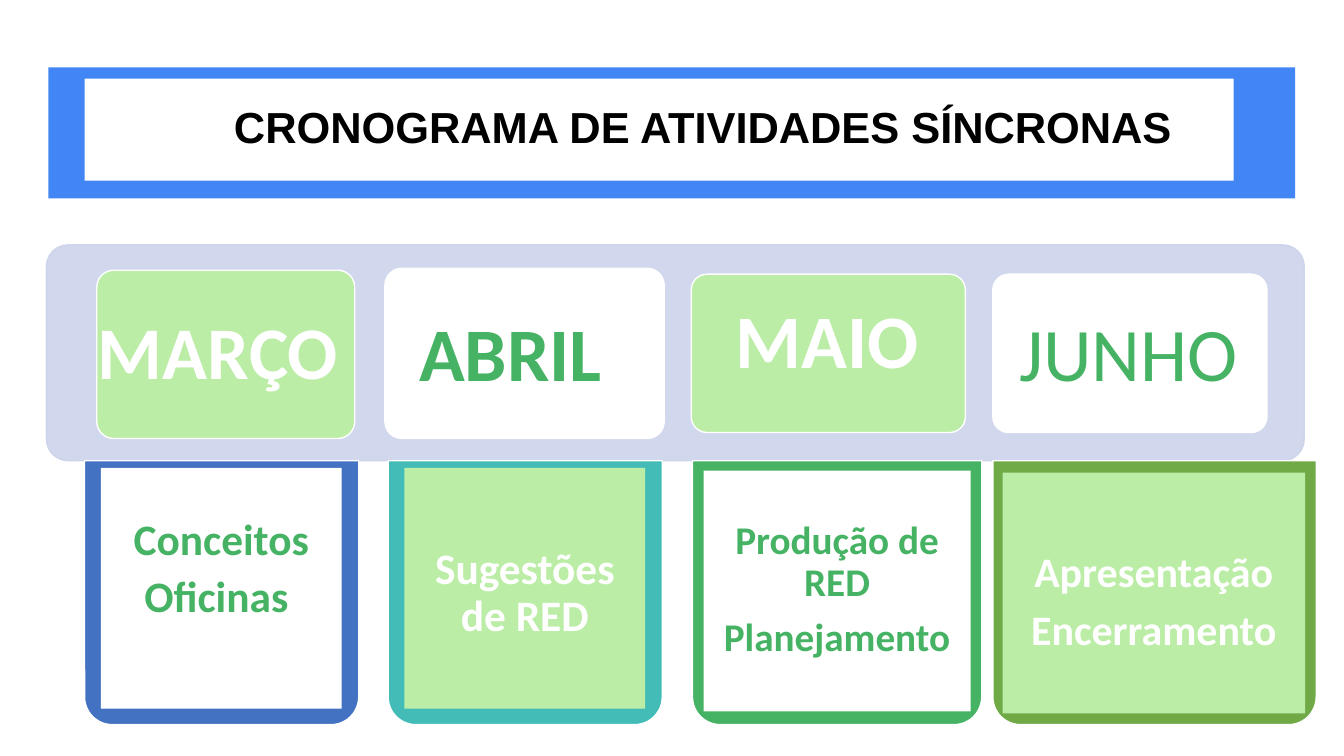
from pptx import Presentation
from pptx.dml.color import RGBColor
from pptx.enum import shapes, text
from pptx.oxml.ns import qn
from pptx.util import Cm, Pt
from dataclasses import dataclass
from lxml import etree

TITLE = "CRONOGRAMA DE ATIVIDADES SÍNCRONAS"

# Boxes are (left, top, width, height) in cm; a card is (left, top, width).
MONTHS = [
    dict(name="MARÇO", tile=(2.44, 6.81, 6.5, 4.24), label=(2.13, 7.57, 6.73),
         name_size=53, bold=True, tab=(2.13, 6.91, "4372C3"),
         card=(2.54, 11.79, 6.07), tasks=["Conceitos", "Oficinas "],
         size=31, gap=7, inset=1.27, green_card=False),
    dict(name="ABRIL", tile=(9.7, 6.76, 7.04, 4.29), label=(10.29, 7.57, 5.16),
         name_size=54, bold=True, tab=(9.78, 6.91, "43BCB8"),
         card=(10.19, 11.79, 6.07), tasks=["Sugestões de RED"],
         size=31, gap=8.4, inset=2.0, green_card=True),
    dict(name="MAIO", tile=(17.42, 6.91, 6.91, 3.99), label=(18.26, 7.26, 5.18),
         name_size=54, bold=True, tab=(17.45, 7.29, "45B363"),
         card=(17.73, 11.86, 6.73), tasks=["Produção de RED", "Planejamento"],
         size=28, gap=8.8, inset=1.25, green_card=False),
    dict(name="JUNHO", tile=(25.02, 6.91, 6.91, 3.99), label=(25.4, 7.57, 6.07),
         name_size=54, bold=False, tab=(25.02, 8.15, "6FAA47"),
         card=(25.27, 11.91, 7.62), tasks=["Apresentação", "Encerramento"],
         size=30, gap=8.8, inset=1.98, green_card=True),
]
TAB_TOP, TAB_HEIGHT = 11.61, 6.65
CARD_HEIGHT, LABEL_HEIGHT = 6.07, 2.57


@dataclass(frozen=True)
class Theme:
    blue: str = "4285F4"
    lilac: str = "CCD3EA"
    light: str = "BBEDA6"
    green: str = "45B363"
    white: str = "FFFFFF"
    black: str = "000000"
    title_font: str = "Arial"
    font: str = "Calibri"
    title_size: float = 31
    line: float = 1


T = Theme()
KIND = shapes.MSO_SHAPE


def rgb(value):
    return RGBColor.from_string(value)


def add_box(s, kind, box, fill, line=None, adj=()):
    sp = s.shapes.add_shape(kind, *map(Cm, box))
    sp.shadow.inherit = False
    sp.fill.solid()
    sp.fill.fore_color.rgb = rgb(fill)
    if line:
        sp.line.color.rgb = rgb(line)
        sp.line.width = Pt(T.line)
    else:
        sp.line.fill.background()
    for i, value in enumerate(adj):
        sp.adjustments[i] = value
    return sp


def set_frame(tf, left, top, right, bottom, anchor=text.MSO_ANCHOR.TOP):
    tf.word_wrap = True
    tf.auto_size = text.MSO_AUTO_SIZE.NONE
    tf.vertical_anchor = anchor
    tf.margin_left, tf.margin_top = Cm(left), Cm(top)
    tf.margin_right, tf.margin_bottom = Cm(right), Cm(bottom)


def write(p, words, size, color, bold=True, font=T.font, spacing=0.9):
    p.alignment = text.PP_ALIGN.CENTER
    p.line_spacing = spacing
    r = p.add_run()
    r.text = words
    r.font.name, r.font.size, r.font.bold = font, Pt(size), bold
    r.font.color.rgb = rgb(color)


def set_opacity(sp, percent):
    """Make the solid fill and line of a shape partly transparent."""
    for color in sp._element.spPr.iter(qn("a:srgbClr")):
        etree.SubElement(color, qn("a:alpha")).set("val", str(percent * 1000))


def add_title(s):
    add_box(s, KIND.RECTANGLE, (1.22, 1.7, 31.42, 3.3), T.blue)
    sp = s.shapes.title
    sp.left, sp.top, sp.width, sp.height = map(Cm, (2.13, 1.98, 28.96, 2.57))
    sp.fill.solid()
    sp.fill.fore_color.rgb = rgb(T.white)
    set_frame(sp.text_frame, 2.45, 0.13, 0.25, 0.13, text.MSO_ANCHOR.MIDDLE)
    write(sp.text_frame.paragraphs[0], TITLE, T.title_size, T.black,
          font=T.title_font)
    # The title lies in front of its blue band.
    s.shapes._spTree.append(sp._element)


def add_month(s, m):
    # The name tile and the card below it swap colours from month to month.
    tile_fill, name_color = (T.white, T.green) if m["green_card"] else (T.light, T.white)
    card_fill, task_color = (T.light, T.white) if m["green_card"] else (T.white, T.green)

    add_box(s, KIND.ROUNDED_RECTANGLE, m["tile"], tile_fill, T.white, [0.1])
    left, width, color = m["tab"]
    tab = add_box(s, KIND.ROUND_2_SAME_RECTANGLE,
                  (left, TAB_TOP, width, TAB_HEIGHT), color, T.white, [0.105, 0])
    tab.rotation = 180

    card = add_box(s, KIND.RECTANGLE, (*m["card"], CARD_HEIGHT), card_fill)
    tf = card.text_frame
    set_frame(tf, 0.48, m["inset"], 0.48, 0.48)
    for i, task in enumerate(m["tasks"]):
        p = tf.add_paragraph() if i else tf.paragraphs[0]
        p.space_before = Pt(m["gap"] if i else 0)
        write(p, task, m["size"], task_color)

    label = s.shapes.add_textbox(*map(Cm, (*m["label"], LABEL_HEIGHT)))
    set_frame(label.text_frame, 0, 0.13, 0, 0.13)
    write(label.text_frame.paragraphs[0], m["name"], m["name_size"],
          name_color, m["bold"], spacing=1.0)


def main():
    prs = Presentation()
    prs.slide_width, prs.slide_height = Cm(33.87), Cm(19.05)
    s = prs.slides.add_slide(prs.slide_layouts[5])
    add_title(s)
    band = add_box(s, KIND.ROUNDED_RECTANGLE, (1.17, 6.17, 31.7, 5.44),
                   T.lilac, T.lilac, [0.1])
    set_opacity(band, 90)
    for m in MONTHS:
        add_month(s, m)
    prs.save("out.pptx")


if __name__ == "__main__":
    main()
